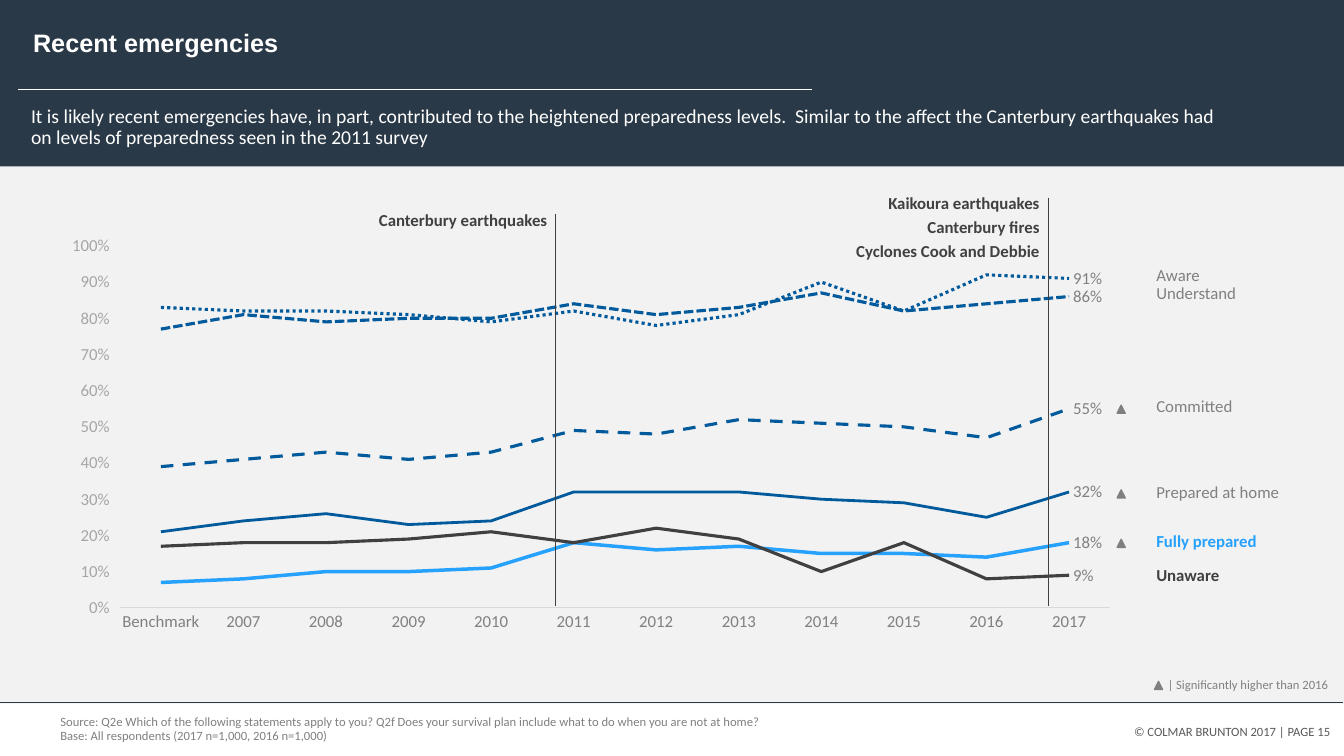
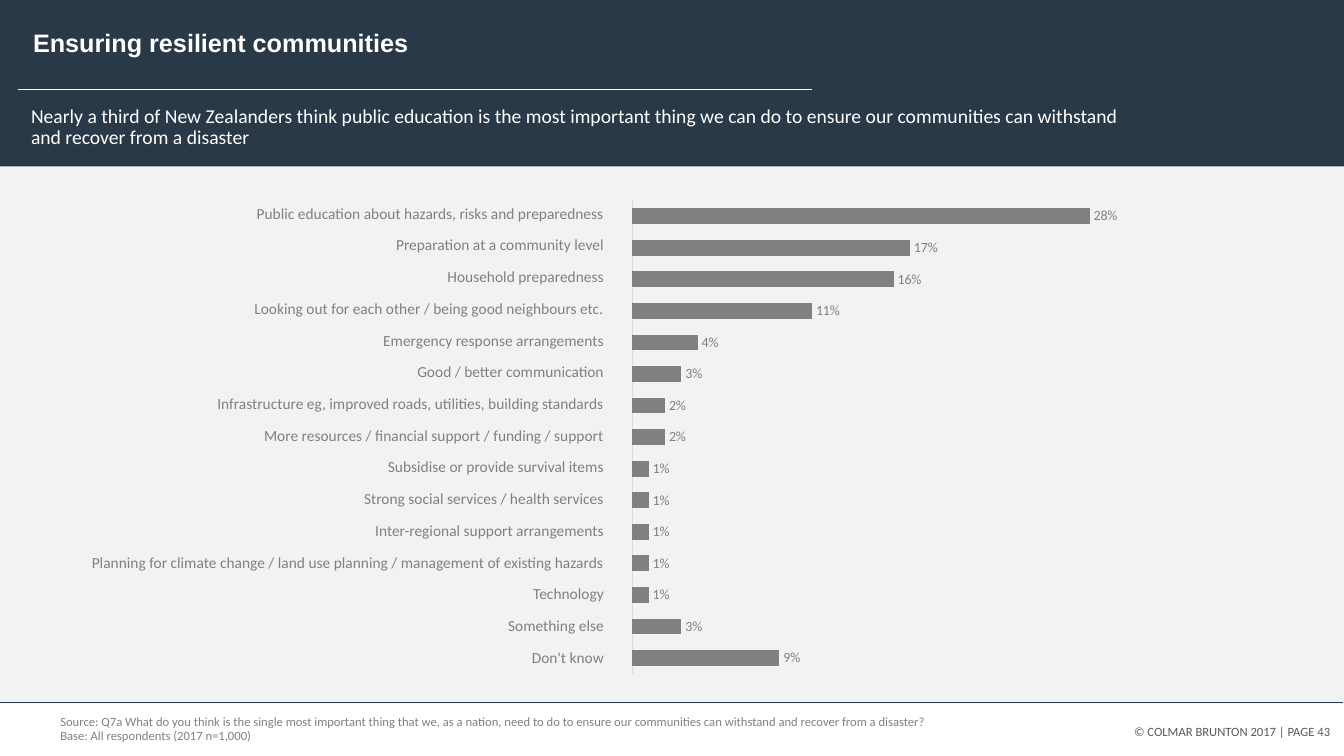
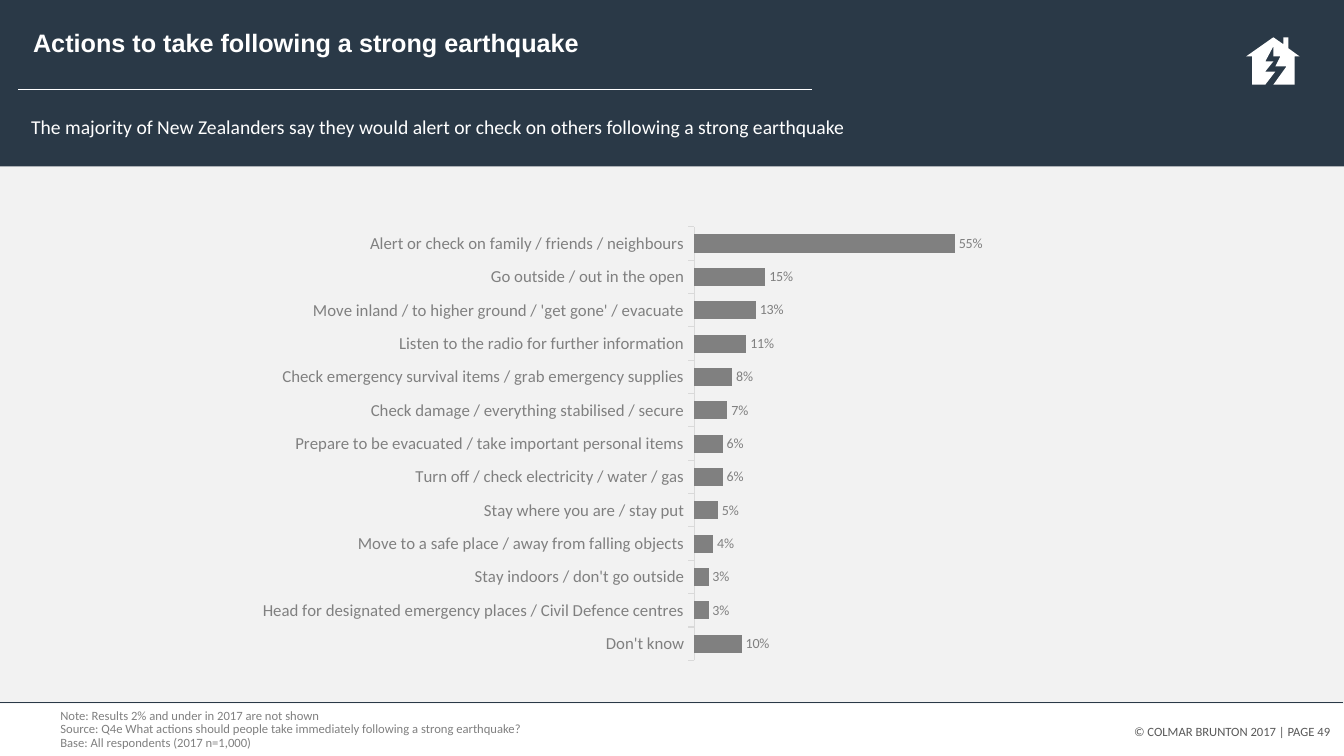
"""Build three survey slides with a shared header band, footer and chart style."""
import lxml.etree
import pptx
import pptx.chart.data
import pptx.dml.color
import pptx.enum.chart
import pptx.enum.dml
import pptx.enum.shapes
import pptx.enum.text
import pptx.oxml.ns
import pptx.util

RGB = pptx.dml.color.RGBColor
NAVY = RGB(0x2A, 0x39, 0x47)
PALE = RGB(0xF2, 0xF2, 0xF2)
WHITE = RGB(0xFF, 0xFF, 0xFF)
GREY = RGB(0x80, 0x80, 0x80)
SILVER = RGB(0xA6, 0xA6, 0xA6)
RULE = RGB(0xD9, 0xD9, 0xD9)
DARK = RGB(0x40, 0x40, 0x40)
SLATE = RGB(0x59, 0x59, 0x59)
BLUE = RGB(0x01, 0x5A, 0x9C)
SKY = RGB(0x26, 0xA1, 0xFE)

PX = 9144
NO_STYLE = "{2D5ABB26-0587-4C30-8999-92F81FD0307C}"
qn = pptx.oxml.ns.qn
Pt = pptx.util.Pt
Align = pptx.enum.text.PP_ALIGN
Anchor = pptx.enum.text.MSO_ANCHOR
Shape = pptx.enum.shapes.MSO_SHAPE
Dash = pptx.enum.dml.MSO_LINE
Chart = pptx.enum.chart.XL_CHART_TYPE
Label = pptx.enum.chart.XL_LABEL_POSITION
Tick = pptx.enum.chart.XL_TICK_MARK
TickLabel = pptx.enum.chart.XL_TICK_LABEL_POSITION


class Deck:
    """Holds the presentation, its style and the current slide."""

    def __init__(self):
        self.prs = pptx.Presentation()
        self.prs.slide_width = 1333 * PX
        self.prs.slide_height = 750 * PX
        self.s = None

    def slide(self, title, headline, source, page, widths):
        """Start a slide with its bands, rules, title, headline and footer."""
        self.s = self.prs.slides.add_slide(self.prs.slide_layouts[6])
        title_w, headline_w, source_w = widths
        self.shape(0, 120, 1333, 578, PALE)
        self.shape(0, 0, 1333, 165, NAVY)
        self.shape(0, 720, 1333, 30, WHITE)
        self.line(-1, 697, 1332, 697, NAVY)
        self.line(18, 89, 805, 89, WHITE)
        self.text(935, 713, 394, 25, [f"© COLMAR BRUNTON 2017 | PAGE {page}"], 9, SLATE, align=Align.RIGHT)
        self.text(23, 2, title_w, 84, [title], 18, WHITE, True, font="Arial", middle=True)
        self.text(21, 95, headline_w, 64, [headline], 14, WHITE, middle=True)
        self.text(50, 711, source_w, 26, source, 9, GREY, middle=True)

    def font(self, font, size, color, bold=False, name="Calibri"):
        """Set the face, size, colour and weight of a font."""
        font.name, font.size, font.bold = name, Pt(size), bold
        font.color.rgb = color

    def text(self, x, y, w, h, lines, size, color, bold=False, align=Align.LEFT,
             font="Calibri", middle=False, inset=None):
        """Add a text box with one paragraph per line."""
        sp = self.s.shapes.add_textbox(x * PX, y * PX, w * PX, h * PX)
        tf = sp.text_frame
        tf.word_wrap = True
        if inset is not None:
            tf.margin_left = tf.margin_right = tf.margin_top = tf.margin_bottom = inset * PX
        if middle:
            tf.vertical_anchor = Anchor.MIDDLE
        for i, line in enumerate(lines):
            p = tf.add_paragraph() if i else tf.paragraphs[0]
            p.alignment = align
            if middle:
                p.line_spacing = 0.9
            r = p.add_run()
            r.text = line
            self.font(r.font, size, color, bold, font)

    def shape(self, x, y, w, h, color, kind=Shape.RECTANGLE, outline=0):
        """Add a filled preset shape, outlined in its own colour if asked."""
        sp = self.s.shapes.add_shape(kind, x * PX, y * PX, w * PX, h * PX)
        sp.shadow.inherit = False
        sp.fill.solid()
        sp.fill.fore_color.rgb = color
        if outline:
            sp.line.color.rgb = color
            sp.line.width = Pt(outline)
        else:
            sp.line.fill.background()

    def rise(self, x, y):
        """Add the small triangle that marks a significant rise."""
        self.shape(x, y, 8, 8, GREY, Shape.ISOSCELES_TRIANGLE, 1)

    def line(self, x1, y1, x2, y2, color):
        """Add a thin straight line."""
        c = self.s.shapes.add_connector(
            pptx.enum.shapes.MSO_CONNECTOR.STRAIGHT, x1 * PX, y1 * PX, x2 * PX, y2 * PX)
        c.line.color.rgb = color
        c.line.width = Pt(0.5)
        lxml.etree.SubElement(c.element.spPr, qn("a:effectLst"))

    def outline(self, points, color):
        """Add a filled closed outline."""
        fb = self.s.shapes.build_freeform(*points[0], scale=PX)
        fb.add_line_segments(points[1:], close=True)
        sp = fb.convert_to_shape()
        sp.shadow.inherit = False
        sp.fill.solid()
        sp.fill.fore_color.rgb = color
        sp.line.fill.background()

    def chart(self, kind, x, y, w, h, cats, series, plot_box, top, tick):
        """Add a percentage chart with a fixed plot area."""
        data = pptx.chart.data.CategoryChartData(number_format="0%")
        data.categories = cats
        for i, values in enumerate(series, 1):
            data.add_series(f"Series {i}", [v / 100 for v in values])
        chart = self.s.shapes.add_chart(kind, x * PX, y * PX, w * PX, h * PX, data).chart
        chart.has_legend = chart.has_title = False
        chart.font.name, chart.font.size = "Calibri", Pt(10)
        cat, val = chart.category_axis, chart.value_axis
        cat.has_major_gridlines = val.has_major_gridlines = False
        cat.major_tick_mark = tick
        cat.format.line.color.rgb = RULE
        cat.format.line.width = Pt(0.75)
        self.font(cat.tick_labels.font, 12, GREY)
        val.minimum_scale, val.maximum_scale = 0, top
        area = chart.element.find(".//" + qn("c:plotArea"))
        for old in area.findall(qn("c:layout")):
            area.remove(old)
        layout = lxml.etree.Element(qn("c:layout"))
        manual = lxml.etree.SubElement(layout, qn("c:manualLayout"))
        modes = [("layoutTarget", "inner"), ("xMode", "edge"), ("yMode", "edge")]
        for tag, value in modes + list(zip("xywh", plot_box)):
            lxml.etree.SubElement(manual, qn("c:" + tag)).set("val", str(value))
        area.insert(0, layout)
        return chart

    def lines(self, x, y, w, h, cats, series, plot_box):
        """Add a line chart whose last points carry labels."""
        chart = self.chart(Chart.LINE, x, y, w, h, cats, [row[0] for row in series],
                           plot_box, 1, Tick.NONE)
        val = chart.value_axis
        val.major_unit = 0.1
        val.major_tick_mark = Tick.OUTSIDE
        val.format.line.fill.background()
        val.tick_labels.number_format = "0%"
        val.tick_labels.number_format_is_linked = False
        self.font(val.tick_labels.font, 12, SILVER)
        for ser, (values, color, width, dash) in zip(chart.plots[0].series, series):
            ser.smooth = False
            ser.marker.style = pptx.enum.chart.XL_MARKER_STYLE.NONE
            ser.format.line.color.rgb = color
            ser.format.line.width = Pt(width)
            if dash:
                ser.format.line.dash_style = dash
            label = ser.points[len(values) - 1].data_label
            self.font(label.font, 12, GREY)
            label.position = Label.RIGHT
            ser.data_labels.show_value = False

    def bars(self, x, y, w, h, cats, values, plot_box, top, gap, tick, named):
        """Add a horizontal bar chart that reads from the top."""
        chart = self.chart(Chart.BAR_CLUSTERED, x, y, w, h, cats, [values], plot_box, top, tick)
        chart.value_axis.visible = False
        chart.category_axis.reverse_order = True
        if not named:
            chart.category_axis.tick_label_position = TickLabel.NONE
        plot = chart.plots[0]
        plot.gap_width = gap
        plot.vary_by_categories = False
        fill = plot.series[0].format.fill
        fill.solid()
        fill.fore_color.rgb = GREY
        plot.has_data_labels = True
        labels = plot.data_labels
        labels.show_value = True
        labels.number_format = "0%"
        labels.number_format_is_linked = False
        labels.position = Label.OUTSIDE_END
        self.font(labels.font, 10, GREY)

    def label_table(self, x, y, w, h, labels):
        """Add a one-column table of right-aligned labels."""
        frame = self.s.shapes.add_table(len(labels), 1, x * PX, y * PX, w * PX, h * PX)
        table = frame.table
        table.first_row = table.horz_banding = False
        frame.element.find(".//" + qn("a:tableStyleId")).text = NO_STYLE
        for row, label in zip(table.rows, labels):
            row.height = h * PX // len(labels)
            cell = row.cells[0]
            cell.fill.background()
            cell.vertical_anchor = Anchor.MIDDLE
            cell.margin_left = cell.margin_right = cell.margin_top = PX
            cell.margin_bottom = 0
            p = cell.text_frame.paragraphs[0]
            p.alignment = Align.RIGHT
            r = p.add_run()
            r.text = label
            self.font(r.font, 11, GREY)


def emergencies(deck):
    """Build the slide on recent emergencies."""
    deck.slide(
        "Recent emergencies",
        "It is likely recent emergencies have, in part, contributed to the heightened preparedness "
        "levels.  Similar to the affect the Canterbury earthquakes had on levels of preparedness "
        "seen in the 2011 survey",
        ["Source: Q2e Which of the following statements apply to you? Q2f Does your survival plan "
         "include what to do when you are not at home?",
         "Base: All respondents (2017 n=1,000, 2016 n=1,000)"],
        15, (836, 1204, 849))
    series = [
        ([7, 8, 10, 10, 11, 18, 16, 17, 15, 15, 14, 18], SKY, 2.5, None),
        ([21, 24, 26, 23, 24, 32, 32, 32, 30, 29, 25, 32], BLUE, 2, None),
        ([39, 41, 43, 41, 43, 49, 48, 52, 51, 50, 47, 55], BLUE, 2.25, Dash.DASH),
        ([77, 81, 79, 80, 80, 84, 81, 83, 87, 82, 84, 86], BLUE, 2.25, Dash.SQUARE_DOT),
        ([83, 82, 82, 81, 79, 82, 78, 81, 90, 82, 92, 91], BLUE, 2.25, Dash.ROUND_DOT),
        ([17, 18, 18, 19, 21, 18, 22, 19, 10, 18, 8, 9], DARK, 2.25, None),
    ]
    years = ["Benchmark"] + [str(year) for year in range(2007, 2018)]
    deck.lines(43, 229, 1081, 427, years, series, (0.07, 0.035, 0.909, 0.841))
    for name, y, color, bold in [
        ("Aware", 258, GREY, False),
        ("Understand", 276, GREY, False),
        ("Committed", 388, GREY, False),
        ("Prepared at home", 473, GREY, False),
        ("Fully prepared", 522, SKY, True),
        ("Unaware", 555, DARK, True),
    ]:
        deck.text(1137, y, 176, 30, [name], 12, color, bold)
    for y in (402, 486, 535):
        deck.rise(1108, y)
    deck.rise(1145, 676)
    deck.text(1158, 672, 165, 15, ["| Significantly higher than 2016"], 9, GREY, inset=0)
    deck.line(551, 212, 551, 601, DARK)
    deck.text(366, 203, 196, 30, ["Canterbury earthquakes"], 12, DARK, True)
    deck.line(1040, 196, 1040, 601, DARK)
    events = ["Kaikoura earthquakes", "Canterbury fires", "Cyclones Cook and Debbie"]
    for i, event in enumerate(events):
        deck.text(791, 186 + 24 * i, 250, 30, [event], 12, DARK, True, Align.RIGHT)


def communities(deck):
    """Build the slide on resilient communities."""
    deck.slide(
        "Ensuring resilient communities",
        "Nearly a third of New Zealanders think public education is the most important thing we "
        "can do to ensure our communities can withstand and recover from a disaster",
        ["Source: Q7a What do you think is the single most important thing that we, as a nation, "
         "need to do to ensure our communities can withstand and recover from a disaster?",
         "Base: All respondents (2017 n=1,000)"],
        43, (1150, 1113, 973))
    answers = {
        "Public education about hazards, risks and preparedness": 28,
        "Preparation at a community level": 17,
        "Household preparedness": 16,
        "Looking out for each other / being good neighbours etc.": 11,
        "Emergency response arrangements": 4,
        "Good / better communication": 3,
        "Infrastructure eg, improved roads, utilities, building standards": 2,
        "More resources / financial support / funding / support": 2,
        "Subsidise or provide survival items": 1,
        "Strong social services / health services": 1,
        "Inter-regional support arrangements": 1,
        "Planning for climate change / land use planning / management of existing hazards": 1,
        "Technology": 1,
        "Something else": 3,
        "Don't know": 9,
    }
    numbers = [str(i) for i in range(1, len(answers) + 1)]
    deck.bars(600, 180, 534, 508, numbers, answers.values(),
              (0.051, 0.037, 0.91, 0.925), 0.3, 100, Tick.NONE, False)
    deck.label_table(23, 196, 577, 472, answers)


def actions(deck):
    """Build the slide on actions after an earthquake."""
    deck.slide(
        "Actions to take following a strong earthquake",
        "The majority of New Zealanders say they would alert or check on others following a "
        "strong earthquake",
        ["Note: Results 2% and under in 2017 are not shown",
         "Source: Q4e What actions should people take immediately following a strong earthquake?",
         "Base: All respondents (2017 n=1,000)"],
        49, (703, 849, 849))
    answers = {
        "Alert or check on family / friends / neighbours": 55,
        "Go outside / out in the open": 15,
        "Move inland / to higher ground / 'get gone' / evacuate": 13,
        "Listen to the radio for further information": 11,
        "Check emergency survival items / grab emergency supplies": 8,
        "Check damage / everything stabilised / secure": 7,
        "Prepare to be evacuated / take important personal items": 6,
        "Turn off / check electricity / water / gas": 6,
        "Stay where you are / stay put": 5,
        "Move to a safe place / away from falling objects": 4,
        "Stay indoors / don't go outside": 3,
        "Head for designated emergency places / Civil Defence centres": 3,
        "Don't know": 10,
    }
    deck.bars(153, 220, 1109, 465, list(answers), answers.values(),
              (0.483, 0.011, 0.339, 0.925), 0.8, 84, Tick.OUTSIDE, True)
    house = [(1278, 48), (1278, 37), (1273, 37), (1273, 44), (1263, 37), (1236, 56),
             (1242, 56), (1242, 84), (1255, 84), (1265, 71), (1255, 71), (1263, 61),
             (1255, 61), (1263, 46), (1263, 56), (1270, 56), (1265, 66), (1276, 66),
             (1263, 84), (1284, 84), (1284, 56), (1289, 56)]
    deck.outline(house, WHITE)


def main():
    """Build and save the deck."""
    deck = Deck()
    for build in (emergencies, communities, actions):
        build(deck)
    deck.prs.save("out.pptx")


if __name__ == "__main__":
    main()
